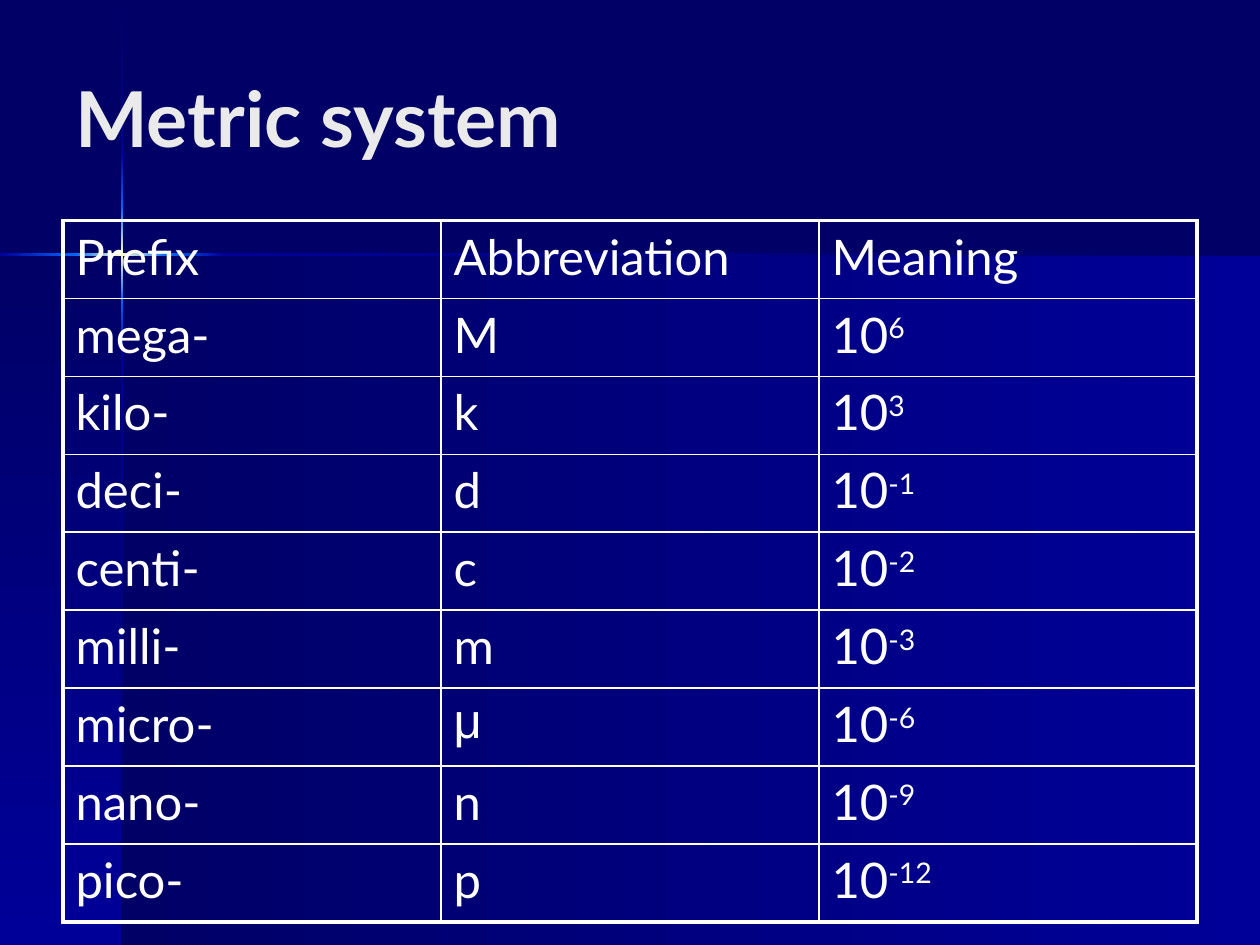
from copy import deepcopy

from lxml import etree
from pptx import Presentation
from pptx.dml.color import RGBColor
from pptx.enum.shapes import MSO_SHAPE
from pptx.enum.text import MSO_ANCHOR
from pptx.oxml.ns import qn
from pptx.util import Inches, Pt

RECTANGLE = MSO_SHAPE.RECTANGLE
MIDDLE = MSO_ANCHOR.MIDDLE

COLORS = {
    "night": "000066",
    "blue": "000099",
    "bright": "0066FF",
    "glow": "FFFFCC",
    "title": "EAEAEA",
    "white": "FFFFFF",
}
FONT = "Lato"
SYMBOL_FONT = "Arial"
ACROSS, DOWN = 0, 270  # python-pptx measures gradient angles counter-clockwise

TITLE = "Metric system"
HEADINGS = ("Prefix", "Abbreviation", "Meaning")
PREFIXES = [
    ("mega-", "M", "6"),
    ("kilo-", "k", "3"),
    ("deci-", "d", "-1"),
    ("centi-", "c", "-2"),
    ("milli-", "m", "-3"),
    ("micro-", "μ", "-6"),
    ("nano-", "n", "-9"),
    ("pico-", "p", "-12"),
]

# left, top, width, height, direction, gradient colours
PANELS = [
    (0.97, 2.02, 9.03, 5.48, ACROSS, ("night", "blue")),
    (0, 2.02, 0.97, 5.48, DOWN, ("night", "blue")),
]
BEAM = 0.02
BEAM_LEFT, BEAM_TOP = 0.96, 2.01
# start, length, gradient colours
VERTICAL_BEAM = [
    (0.01, 1.2, ("night", "blue")),
    (2.82, 4.68, ("blue", "night")),
    (2.38, 0.44, ("bright", "blue")),
    (1.21, 0.44, ("blue", "bright")),
    (1.65, 0.73, ("bright", "glow", "bright")),
]
HORIZONTAL_BEAM = [
    (1.77, 8.23, ("blue", "night")),
    (0, 0.61, ("blue", "bright")),
    (1.33, 0.44, ("bright", "blue")),
    (0.6, 0.73, ("bright", "glow", "bright")),
]

TABLE_LEFT, TABLE_TOP, TABLE_WIDTH, TABLE_HEIGHT = 0.5, 1.75, 9, 5.57
OUTER_LINE, INNER_LINE = 2.25, 1


def rgb(name):
    return RGBColor.from_string(COLORS[name])


def add_gradient_block(slide, left, top, width, height, angle, names):
    shape = slide.shapes.add_shape(
        RECTANGLE, Inches(left), Inches(top), Inches(width), Inches(height))
    shape.shadow.inherit = False
    shape.line.fill.background()
    shape.fill.gradient()
    shape.fill.gradient_angle = angle
    stop_list = next(shape.element.iter(qn("a:gsLst")))
    while len(stop_list) < len(names):
        stop_list.append(deepcopy(stop_list[-1]))
    for index, (stop, name) in enumerate(zip(shape.fill.gradient_stops, names)):
        stop.position = index / (len(names) - 1)
        stop.color.rgb = rgb(name)


def add_backdrop(slide):
    for panel in PANELS:
        add_gradient_block(slide, *panel)
    for start, length, names in VERTICAL_BEAM:
        add_gradient_block(slide, BEAM_LEFT, start, BEAM, length, DOWN, names)
    for start, length, names in HORIZONTAL_BEAM:
        add_gradient_block(slide, start, BEAM_TOP, length, BEAM, ACROSS, names)


def style_font(font, size, color, name=FONT):
    font.name = name
    font.size = Pt(size)
    font.color.rgb = rgb(color)


def add_title(slide):
    box = slide.shapes.add_textbox(Inches(0.5), Inches(0.3), Inches(9), Inches(1.25))
    frame = box.text_frame
    frame.word_wrap = True
    frame.vertical_anchor = MIDDLE
    paragraph = frame.paragraphs[0]
    paragraph.text = TITLE
    paragraph.font.bold = True
    style_font(paragraph.font, 44, "title")


def set_borders(cell, widths):
    """Draw the borders in the order left, right, top, bottom."""
    properties = cell._tc.get_or_add_tcPr()
    for side, width in zip("LRTB", widths):
        line = etree.SubElement(properties, qn(f"a:ln{side}"), w=str(Pt(width)))
        fill = etree.SubElement(line, qn("a:solidFill"))
        etree.SubElement(fill, qn("a:srgbClr"), val=COLORS["white"])


def set_space_before(paragraph, percent):
    spacing = etree.Element(qn("a:spcBef"))
    etree.SubElement(spacing, qn("a:spcPct"), val=str(percent * 1000))
    paragraph._p.get_or_add_pPr().insert(0, spacing)


def fill_cell(cell, text, exponent=None):
    paragraph = cell.text_frame.paragraphs[0]
    paragraph.add_run().text = text
    if exponent:
        run = paragraph.add_run()
        run.text = exponent
        run.font._element.set("baseline", "30000")
    for run in paragraph.runs:
        style_font(run.font, 28, "white", SYMBOL_FONT if text == "μ" else FONT)
    set_space_before(paragraph, 20)


def add_prefix_table(slide):
    rows = [[(heading,) for heading in HEADINGS]]
    rows += [[(prefix,), (short,), ("10", power)] for prefix, short, power in PREFIXES]
    last_row, last_column = len(rows) - 1, len(HEADINGS) - 1
    table = slide.shapes.add_table(
        len(rows), len(HEADINGS), Inches(TABLE_LEFT), Inches(TABLE_TOP),
        Inches(TABLE_WIDTH), Inches(TABLE_HEIGHT)).table
    table.first_row = False
    table.horz_banding = False
    for r, row in enumerate(rows):
        for c, content in enumerate(row):
            cell = table.cell(r, c)
            fill_cell(cell, *content)
            on_edge = (c == 0, c == last_column, r == 0, r == last_row)
            set_borders(cell, [OUTER_LINE if edge else INNER_LINE for edge in on_edge])
            cell.fill.background()


def main():
    presentation = Presentation()
    presentation.slide_width = Inches(10)
    presentation.slide_height = Inches(7.5)
    slide = presentation.slides.add_slide(presentation.slide_layouts[6])
    slide.background.fill.solid()
    slide.background.fill.fore_color.rgb = rgb("night")
    add_backdrop(slide)
    add_title(slide)
    add_prefix_table(slide)
    presentation.save("out.pptx")


if __name__ == "__main__":
    main()
